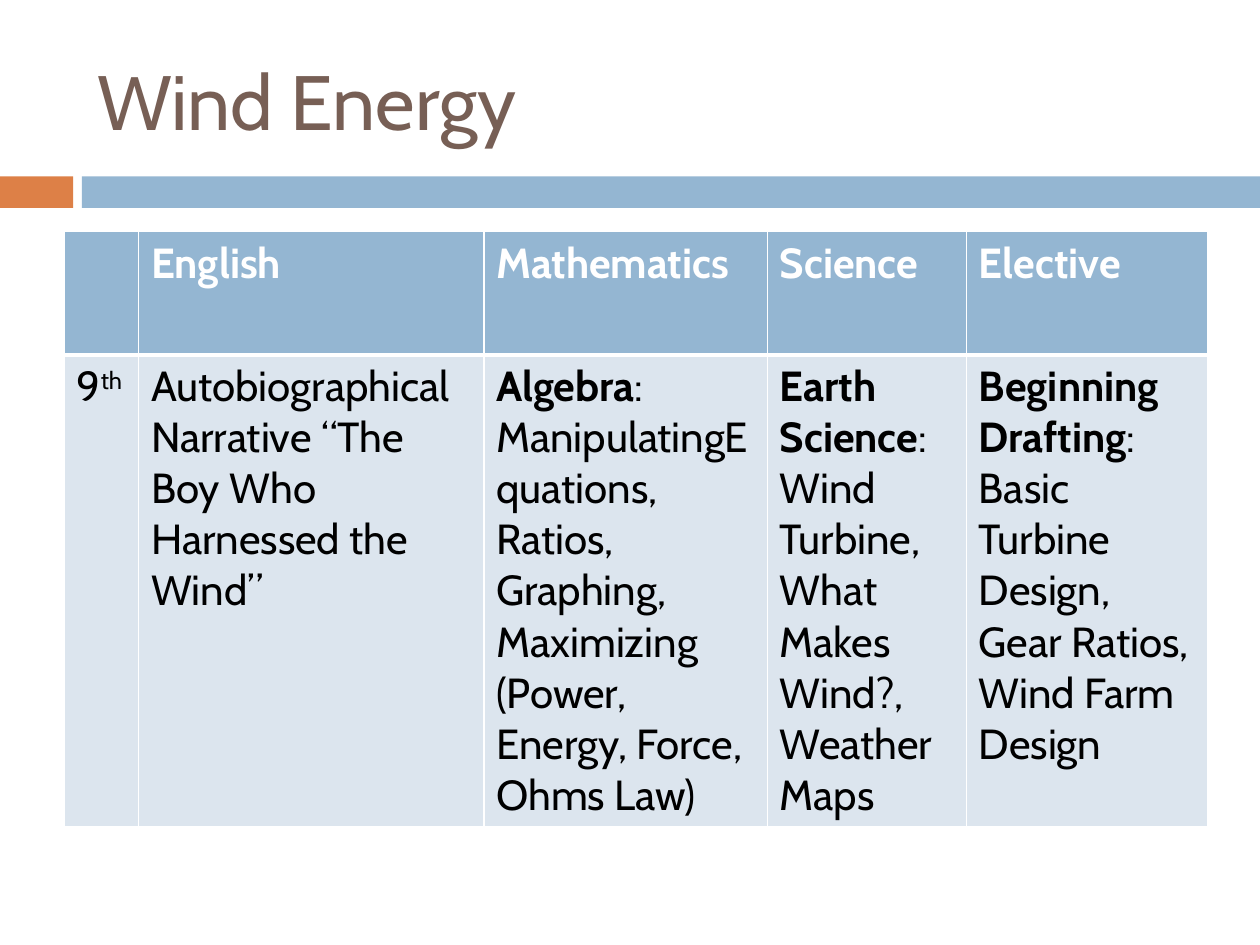
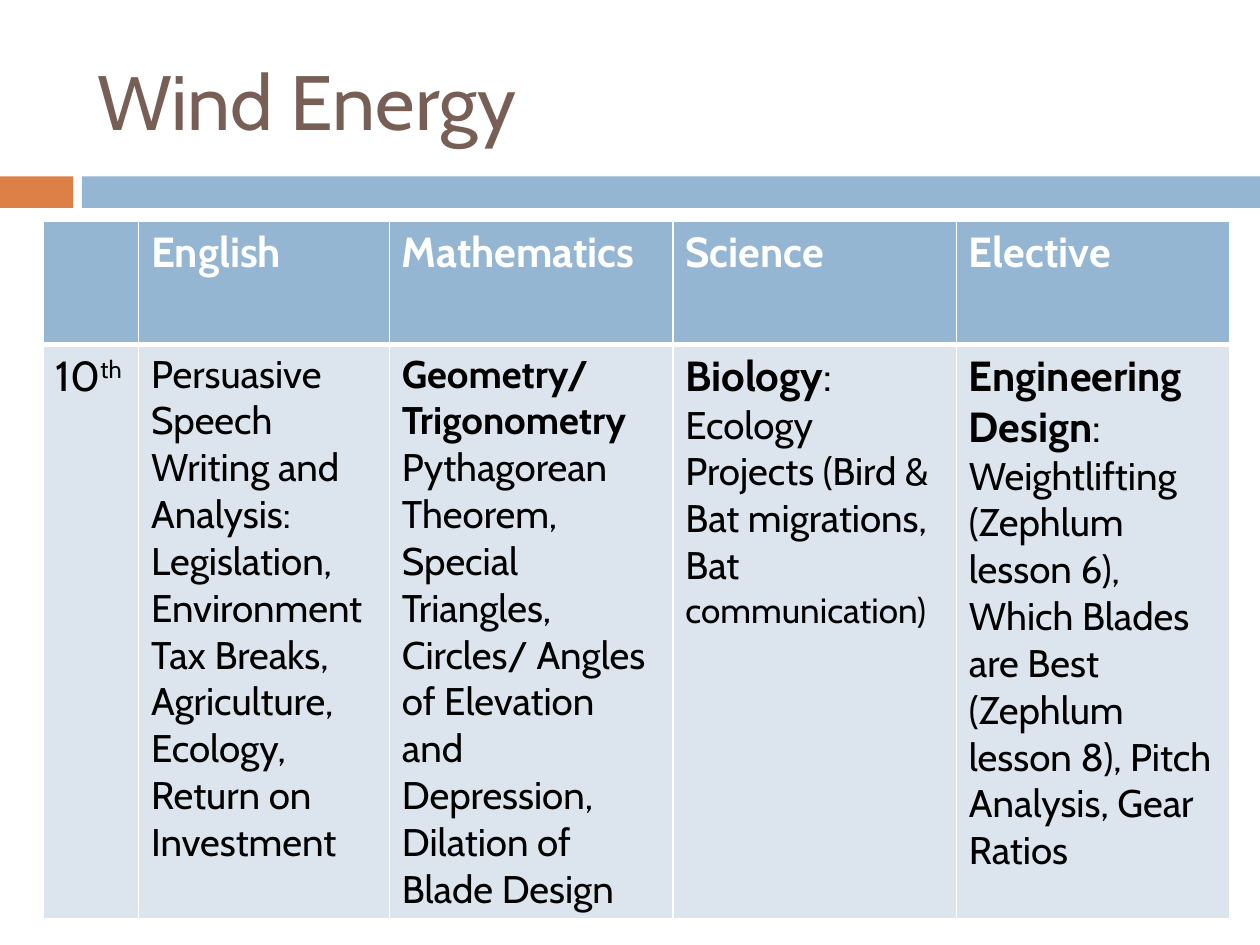
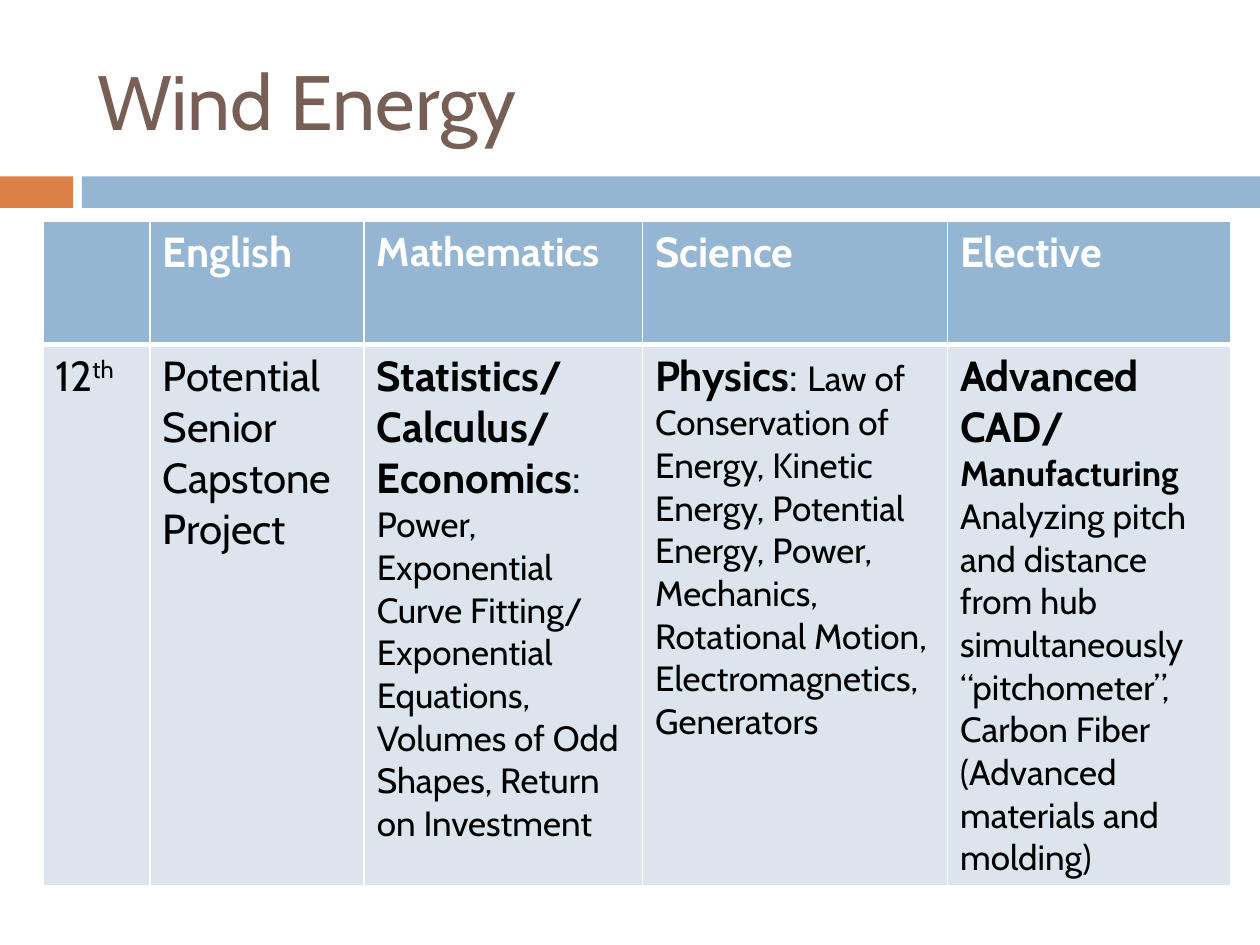
from dataclasses import dataclass

from lxml.etree import SubElement
from pptx import Presentation
from pptx.dml.color import RGBColor
from pptx.enum.shapes import MSO_SHAPE as Preset
from pptx.enum.text import MSO_ANCHOR as Anchor, MSO_AUTO_SIZE as AutoSize, PP_ALIGN as Align
from pptx.oxml.ns import qn
from pptx.util import Inches, Pt

# Shared style
WIDTH, HEIGHT = Inches(10), Inches(7.5)
FONT = "Cabin"
BROWN, ORANGE, BLUE = "775F55", "DD8047", "94B6D2"
PALE, WHITE, BLACK = "DCE5EE", "FFFFFF", "000000"
TITLE = "Wind Energy"
SUBJECTS = ("", "English", "Mathematics", "Science", "Elective")
HEADER_HEIGHT = 13.07
THIN, THICK = 1, 3


@dataclass(frozen=True)
class Part:
    """A stretch of text in one style."""
    text: str
    size: float = 24
    bold: bool = False
    raised: bool = False


@dataclass(frozen=True)
class Band:
    left: float
    width: float
    colour: str


@dataclass(frozen=True)
class Grade:
    """One grade's table; lengths are percentages of the slide's size."""
    number: str
    left: float
    top: float
    columns: tuple[float, ...]
    body_height: float
    lessons: tuple[list[list[Part]], ...]  # cell > paragraphs > parts
    math_heading_size: float = 24


BANDS = (Band(0, 5.8, ORANGE), Band(6.5, 93.5, BLUE))

GRADES = (
    Grade("9", 5.1, 24.5, (5.9, 27.4, 22.5, 15.8, 19.2), 49.5, (
        [[Part("Autobiographical Narrative “The Boy Who Harnessed the Wind”")]],
        [[Part("Algebra", bold=True),
          Part(": ManipulatingEquations, Ratios, Graphing, Maximizing "
               "(Power, Energy, Force, Ohms Law)")]],
        [[Part("Earth Science", bold=True),
          Part(": Wind Turbine, What Makes Wind?, Weather Maps")]],
        [[Part("Beginning Drafting", bold=True),
          Part(": Basic Turbine Design, Gear Ratios, Wind Farm Design")]],
    )),
    Grade("10", 3.4, 23.4, (7.6, 19.9, 22.5, 22.5, 21.7), 60, (
        [[Part("Persuasive Speech Writing and Analysis: Legislation, Environment "
               "Tax Breaks, Agriculture, Ecology, Return on Investment", 22)]],
        [[Part("Geometry/ Trigonometry ", 22, bold=True),
          Part("Pythagorean Theorem, Special Triangles, Circles/ Angles of Elevation "
               "and Depression, Dilation of Blade Design", 22)]],
        [[Part("Biology", bold=True), Part(": "),
          Part("Ecology Projects (Bird & Bat migrations, Bat ", 22),
          Part("communication)", 20)]],
        [[Part("Engineering Design", bold=True), Part(": "),
          Part("Weightlifting (Zephlum lesson 6), Which Blades are Best "
               "(Zephlum lesson 8), Pitch Analysis, Gear Ratios", 22)]],
    )),
    Grade("12", 3.4, 23.4, (8.5, 17, 22.1, 24.2, 22.5), 56.5, (
        [[Part("Potential Senior Capstone Project")]],
        [[Part("Statistics/ Calculus/ Economics", bold=True), Part(": "),
          Part("Power, Exponential Curve Fitting/ Exponential Equations, "
               "Volumes of Odd Shapes, Return on Investment", 20)]],
        [[Part("Physics", bold=True), Part(": "),
          Part("Law of Conservation of Energy, Kinetic Energy, Potential Energy, Power, "
               "Mechanics, Rotational Motion, Electromagnetics, Generators", 20)]],
        [[Part("Advanced CAD/ ", bold=True), Part("Manufacturing", 20, bold=True)],
         [Part("Analyzing pitch and distance from hub simultaneously “pitchometer”, "
               "Carbon Fiber (Advanced materials and molding)", 20)]],
    ), math_heading_size=23),
)


def across(percent: float) -> int:
    return round(WIDTH * percent / 100)


def down(percent: float) -> int:
    return round(HEIGHT * percent / 100)


def paint(fill, colour: str) -> None:
    fill.solid()
    fill.fore_color.rgb = RGBColor.from_string(colour)


def style(font, size: float, colour: str, bold: bool = False) -> None:
    font.name, font.size, font.bold = FONT, Pt(size), bold
    font.color.rgb = RGBColor.from_string(colour)


def add_title(slide) -> None:
    title = slide.shapes.title
    title.left, title.top = across(6.7), down(3.33)
    title.width, title.height = across(89.2), down(14.4)
    frame = title.text_frame
    frame.text = TITLE
    frame.auto_size, frame.vertical_anchor = AutoSize.NONE, Anchor.MIDDLE
    heading = frame.paragraphs[0]
    heading.alignment = Align.LEFT
    style(heading.runs[0].font, 44, BROWN)


def add_band(slide, band: Band) -> None:
    bar = slide.shapes.add_shape(Preset.RECTANGLE, across(band.left), down(18.67),
                                 across(band.width), down(3.33))
    bar.shadow.inherit = False
    paint(bar.fill, band.colour)
    bar.line.fill.background()


def add_borders(cell, top: float, bottom: float) -> None:
    properties = cell._tc.get_or_add_tcPr()
    for side, points in (("L", THIN), ("R", THIN), ("T", top), ("B", bottom)):
        edge = SubElement(properties, qn(f"a:ln{side}"), w=str(Pt(points)))
        SubElement(SubElement(edge, qn("a:solidFill")), qn("a:srgbClr"), val=WHITE)


def fill_cell(cell, paragraphs: list[list[Part]], colour: str) -> None:
    frame = cell.text_frame
    for index, parts in enumerate(paragraphs):
        paragraph = frame.add_paragraph() if index else frame.paragraphs[0]
        for part in parts:
            run = paragraph.add_run()
            run.text = part.text
            style(run.font, part.size, colour, part.bold)
            if part.raised:
                run._r.get_or_add_rPr().set("baseline", "30000")


def add_curriculum(slide, grade: Grade) -> None:
    heights = (HEADER_HEIGHT, grade.body_height)
    table = slide.shapes.add_table(
        2, len(SUBJECTS), across(grade.left), down(grade.top),
        across(sum(grade.columns)), down(sum(heights))).table
    table.first_row = table.horz_banding = False
    for column, share in zip(table.columns, grade.columns):
        column.width = across(share)
    for row, share in zip(table.rows, heights):
        row.height = down(share)

    headings = [
        [[Part(subject, grade.math_heading_size if subject == "Mathematics" else 24, True)]]
        if subject else [] for subject in SUBJECTS]
    lessons = [[[Part(grade.number), Part("th", raised=True)]], *grade.lessons]
    looks = ((headings, BLUE, WHITE, THIN, THICK), (lessons, PALE, BLACK, THICK, THIN))
    for row, (contents, background, ink, top, bottom) in zip(table.rows, looks):
        for cell, paragraphs in zip(row.cells, contents):
            add_borders(cell, top, bottom)
            paint(cell.fill, background)
            fill_cell(cell, paragraphs, ink)


def main() -> None:
    deck = Presentation()
    deck.slide_width, deck.slide_height = WIDTH, HEIGHT
    title_only = deck.slide_layouts[5]
    for grade in GRADES:
        slide = deck.slides.add_slide(title_only)
        for band in BANDS:
            add_band(slide, band)
        add_title(slide)
        add_curriculum(slide, grade)
    deck.save("out.pptx")


if __name__ == "__main__":
    main()
